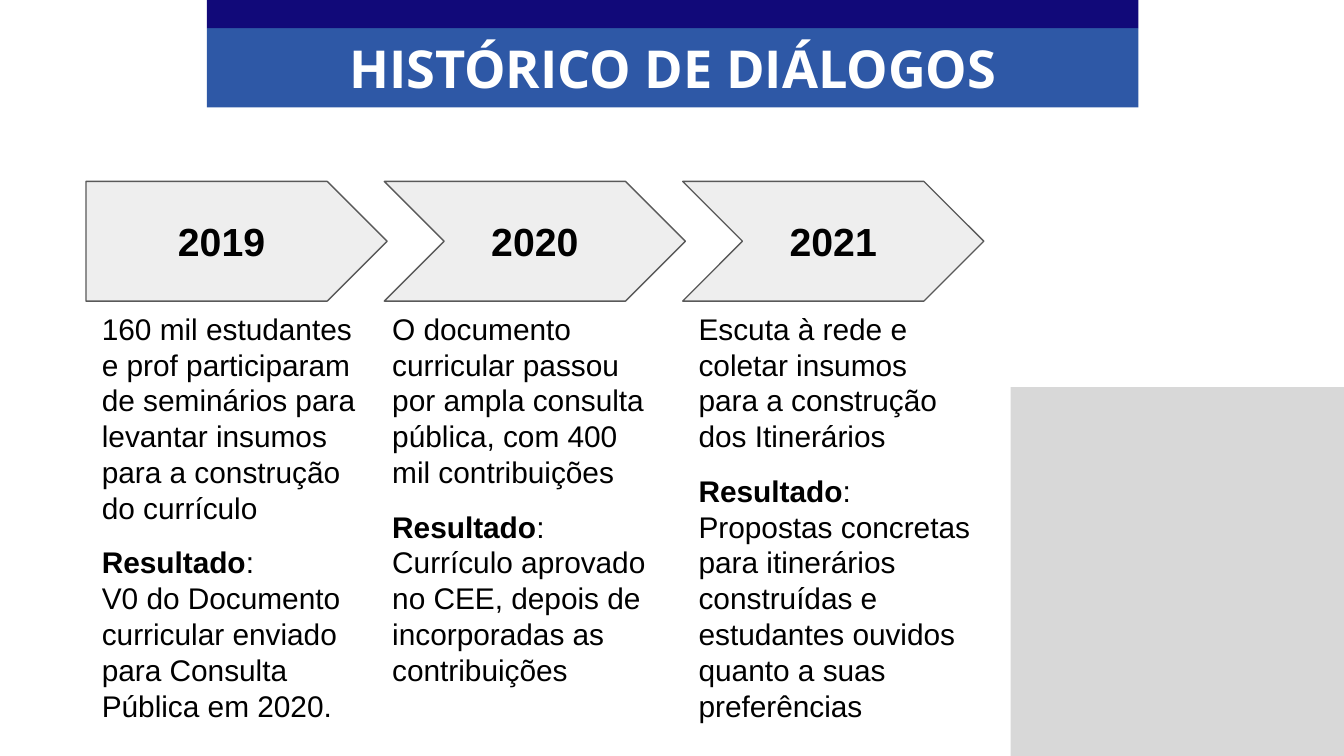
from dataclasses import dataclass

import pptx
import pptx.dml.color
import pptx.enum.shapes
import pptx.enum.text
import pptx.oxml
import pptx.oxml.ns
import pptx.util

Inches = pptx.util.Inches
Pt = pptx.util.Pt
SHAPES = pptx.enum.shapes.MSO_SHAPE
ALIGN = pptx.enum.text.PP_ALIGN
ANCHOR = pptx.enum.text.MSO_ANCHOR
AUTO_SIZE = pptx.enum.text.MSO_AUTO_SIZE

COLORS = {
    "navy": "110979",
    "blue": "2E58A6",
    "arrow": "EEEEEE",
    "outline": "595959",
    "panel": "BFBFBF",
    "text": "000000",
    "title": "FFFFFF",
}
ARROW_LEFT, ARROW_STEP = 0.64, 2.22
BAND_LEFT, BAND_WIDTH = 1.54, 6.93


@dataclass
class Stage:
    year: str
    shape: int
    left: float
    width: float
    height: float
    action: str
    result: str


STAGES = [
    Stage("2019", SHAPES.PENTAGON, 0.66, 2.24, 3.3,
          "160 mil estudantes e prof participaram de seminários para "
          "levantar insumos para a construção do currículo",
          ": \nV0 do Documento curricular enviado para Consulta Pública em 2020."),
    Stage("2020", SHAPES.CHEVRON, 2.82, 2.09, 3.04,
          "O documento curricular passou por ampla consulta pública, "
          "com 400 mil contribuições",
          ": Currículo aprovado no CEE, depois de incorporadas as contribuições"),
    Stage("2021", SHAPES.CHEVRON, 5.1, 2.24, 3.3,
          "Escuta à rede e coletar insumos para a construção dos Itinerários",
          ": Propostas concretas para itinerários construídas e estudantes "
          "ouvidos quanto a suas preferências"),
]


def rgb(name: str) -> pptx.dml.color.RGBColor:
    return pptx.dml.color.RGBColor.from_string(COLORS[name])


def set_font(font, name: str, size: float, color: str, bold: bool | None = None) -> None:
    font.name, font.size, font.bold = name, Pt(size), bold
    font.color.rgb = rgb(color)


def set_margins(frame, side: float, top: float) -> None:
    frame.margin_left = frame.margin_right = Inches(side)
    frame.margin_top = frame.margin_bottom = Inches(top)
    frame.word_wrap = True


def add_block(page, kind: int, left: float, top: float, width: float,
              height: float, fill: str):
    block = page.shapes.add_shape(
        kind, Inches(left), Inches(top), Inches(width), Inches(height))
    block.shadow.inherit = False
    block.fill.solid()
    block.fill.fore_color.rgb = rgb(fill)
    block.line.fill.background()
    return block


def add_arrow(page, stage: Stage, left: float) -> None:
    arrow = add_block(page, stage.shape, left, 1.35, 2.24, 0.89, "arrow")
    arrow.adjustments[0] = 0.5
    arrow.line.color.rgb = rgb("outline")
    arrow.line.width = Pt(0.75)
    frame = arrow.text_frame
    set_margins(frame, 0.1, 0.1)
    frame.vertical_anchor = ANCHOR.MIDDLE
    para = frame.paragraphs[0]
    para.text = stage.year
    para.alignment = ALIGN.CENTER
    set_font(para.font, "Arial", 21, "text", True)


def add_description(page, stage: Stage) -> None:
    box = page.shapes.add_textbox(
        Inches(stage.left), Inches(2.21), Inches(stage.width), Inches(stage.height))
    frame = box.text_frame
    set_margins(frame, 0.1, 0.1)
    frame.auto_size = AUTO_SIZE.SHAPE_TO_FIT_TEXT
    action = frame.paragraphs[0]
    action.text = stage.action
    result = frame.add_paragraph()
    label = result.add_run()
    label.text = "Resultado"
    label.font.bold = True
    lead, *rest = stage.result.split("\n")
    result.add_run().text = lead
    for line in rest:
        result.add_line_break()
        result.add_run().text = line
    for para in (action, result):
        para.space_before = Pt(10)
        set_font(para.font, "Arial", 16, "text")
    result.space_after = Pt(10)


def add_title(page, text: str) -> None:
    title = page.shapes.title
    title.left, title.top = Inches(BAND_LEFT), Inches(0.22)
    title.width, title.height = Inches(BAND_WIDTH), Inches(0.57)
    frame = title.text_frame
    set_margins(frame, 0.1, 0.05)
    frame.auto_size = AUTO_SIZE.SHAPE_TO_FIT_TEXT
    frame.vertical_anchor = ANCHOR.TOP
    para = frame.paragraphs[0]
    para.text = text
    para.alignment = ALIGN.CENTER
    set_font(para.font, "Open Sans", 28, "title", True)
    # Bring the title in front of its bands
    page.shapes._spTree.append(title._element)


def add_panel(page) -> None:
    panel = add_block(page, SHAPES.RECTANGLE, 7.52, 2.88, 2.48, 2.81, "panel")
    color = panel._element.spPr.find(".//" + pptx.oxml.ns.qn("a:srgbClr"))
    alpha = pptx.oxml.parse_xml(
        f'<a:alpha {pptx.oxml.ns.nsdecls("a")} val="60000"/>')
    color.append(alpha)


def main() -> None:
    # Widescreen page, 16:9
    deck = pptx.Presentation()
    deck.slide_width = Inches(10)
    deck.slide_height = Inches(10 * 9 / 16)
    page = deck.slides.add_slide(deck.slide_layouts[5])

    # Header bands and title
    add_block(page, SHAPES.RECTANGLE, BAND_LEFT, 0.21, BAND_WIDTH, 0.59, "blue")
    add_block(page, SHAPES.RECTANGLE, BAND_LEFT, 0, BAND_WIDTH, 0.21, "navy")
    add_title(page, "HISTÓRICO DE DIÁLOGOS")

    # Timeline: one arrow and one description per year
    for index, stage in enumerate(STAGES):
        add_arrow(page, stage, ARROW_LEFT + index * ARROW_STEP)
        add_description(page, stage)

    # Translucent corner panel
    add_panel(page)

    deck.save("out.pptx")


if __name__ == "__main__":
    main()
